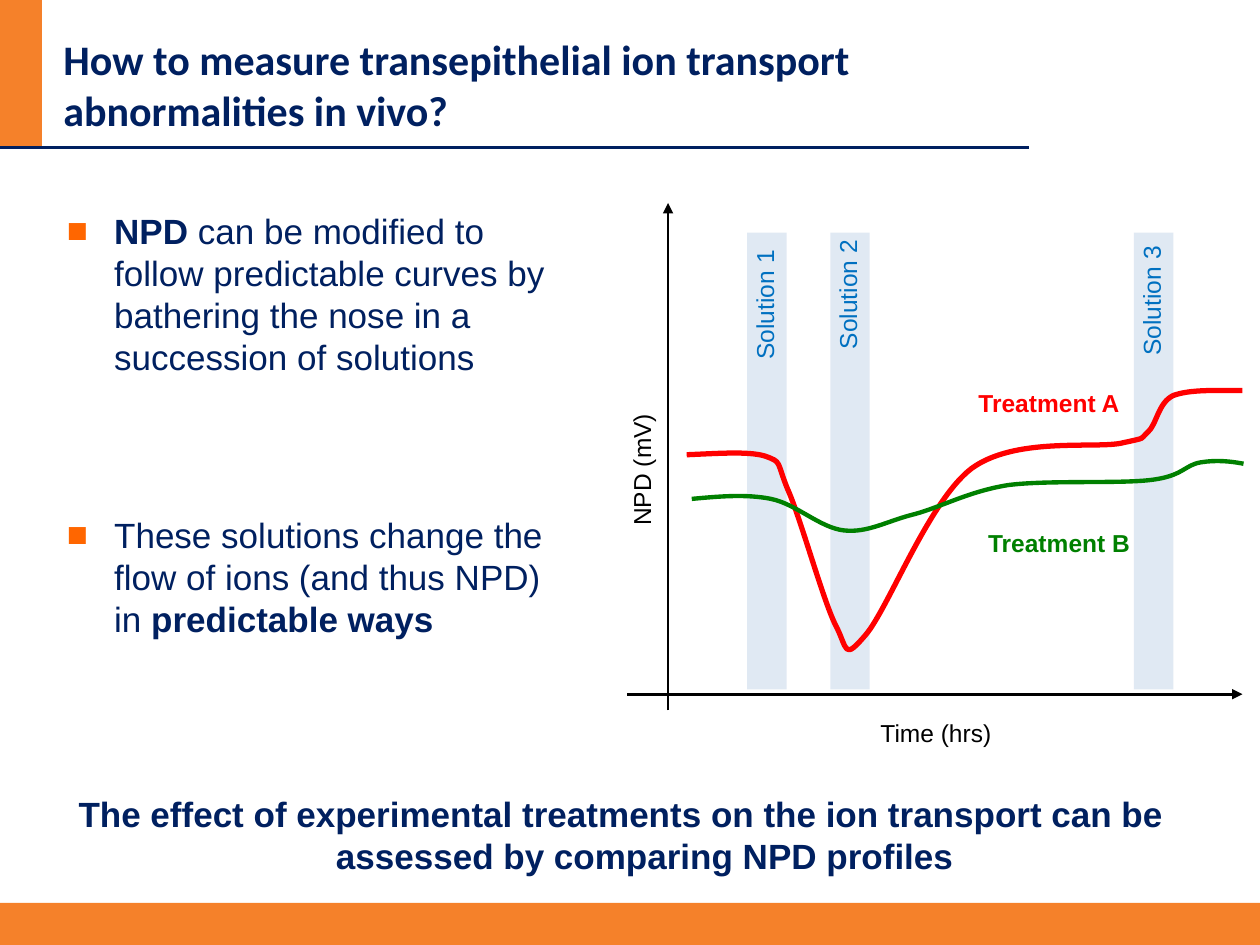
from lxml import etree
from pptx import Presentation
from pptx.dml.color import RGBColor
from pptx.enum.shapes import MSO_CONNECTOR, MSO_SHAPE
from pptx.enum.text import MSO_ANCHOR, MSO_AUTO_SIZE, PP_ALIGN
from pptx.oxml.ns import qn
from pptx.util import Pt

RECTANGLE = MSO_SHAPE.RECTANGLE
STRAIGHT = MSO_CONNECTOR.STRAIGHT
MIDDLE, TOP = MSO_ANCHOR.MIDDLE, MSO_ANCHOR.TOP
LEFT, CENTER = PP_ALIGN.LEFT, PP_ALIGN.CENTER
NO_AUTOFIT = MSO_AUTO_SIZE.NONE

NAVY, ORANGE, BULLET = "002060", "F5812A", "FF6600"
BLACK, RED, GREEN = "000000", "FF0000", "008000"
BAND, BAND_LABEL = "B9CDE5", "0070C0"
LABEL_HEIGHT = 39
HANGING = 27

TREATMENT_A = [
    (62.4, 143.9), (79.7, 143.2), (97.7, 141.8), (107, 144.6),
    (117.1, 148.2), (113.5, 147.5), (120, 163.4),
    (127.2, 179.2), (140.2, 226.7), (147.4, 241.1),
    (154.6, 254.8), (151.7, 262), (164.6, 246.9),
    (177.6, 231.8), (200.6, 170.6), (225.1, 151.8),
    (249.6, 133.8), (293.5, 140.3), (310.1, 137.4),
    (326.6, 133.8), (320.9, 135.3), (325.9, 131),
    (331, 126.6), (331.7, 114.4), (340.3, 110.1),
    (349.7, 106.5), (364.8, 107.2), (379.9, 107.2),
]
TREATMENT_B = [
    (65.3, 169.1), (80.4, 167.7), (96.2, 166.2), (110.6, 169.1),
    (125, 172), (138.7, 185.7), (152.4, 187.1),
    (166.1, 188.6), (177.6, 181.4), (192.7, 177.8),
    (208.6, 173.4), (223.7, 164.8), (246, 161.2),
    (268.3, 158.3), (309.4, 160.5), (327.4, 158.3),
    (346.1, 156.2), (346.8, 149.7), (356.2, 148.2),
    (364.8, 146.8), (372.7, 147.5), (380.6, 149),
]


def color(value):
    return RGBColor.from_string(value)


def set_font(paragraph, size, value, name="Arial", bold=None):
    font = paragraph.font
    font.name, font.size, font.bold = name, Pt(size), bold
    font.color.rgb = color(value)


def set_hanging_indent(paragraph):
    properties = paragraph._p.get_or_add_pPr()
    properties.set("marL", str(Pt(HANGING)))
    properties.set("indent", str(-Pt(HANGING)))
    return properties


def place(shape, box):
    shape.left, shape.top, shape.width, shape.height = map(Pt, box)


def add_bar(slide, box, fill, opacity=100):
    shape = slide.shapes.add_shape(RECTANGLE, *map(Pt, box))
    shape.shadow.inherit = False
    shape.fill.solid()
    shape.fill.fore_color.rgb = color(fill)
    shape.line.fill.background()
    if opacity < 100:
        fill_color = shape.fill._xPr.find(".//" + qn("a:srgbClr"))
        etree.SubElement(fill_color, qn("a:alpha"), val=str(opacity * 1000))


def add_line(slide, start, end, value, arrow=False):
    connector = slide.shapes.add_connector(STRAIGHT, *map(Pt, start + end))
    connector.line.color.rgb = color(value)
    connector.line.width = Pt(1.5)
    if arrow:
        etree.SubElement(connector.line._get_or_add_ln(), qn("a:tailEnd"), type="triangle")
    etree.SubElement(connector._element.spPr, qn("a:effectLst"))


def add_text(slide, box, text, size, value, bold=False, rotation=0):
    shape = slide.shapes.add_textbox(*map(Pt, box))
    shape.rotation = rotation
    shape.text_frame.word_wrap = True
    paragraph = shape.text_frame.paragraphs[0]
    paragraph.text = text
    set_font(paragraph, size, value, bold=bold)
    return paragraph


def add_upward_text(slide, center_x, bottom, text, value):
    length = 96
    box = (center_x - length / 2, bottom - (length + LABEL_HEIGHT) / 2, length, LABEL_HEIGHT)
    add_text(slide, box, text, 14, value, rotation=270)


def add_curve(slide, origin, points, value, width):
    left, top = origin
    outline = [(Pt(left + x), Pt(top + y)) for x, y in points]
    builder = slide.shapes.build_freeform(*outline[0])
    builder.add_line_segments(outline[1:], close=False)
    shape = builder.convert_to_shape()
    path = shape._element.find(".//" + qn("a:path"))
    segments = path.findall(qn("a:lnTo"))
    for index in range(0, len(segments), 3):
        curve = etree.SubElement(path, qn("a:cubicBezTo"))
        for segment in segments[index:index + 3]:
            curve.append(segment[0])
            path.remove(segment)
    shape.shadow.inherit = False
    shape.fill.background()
    shape.line.color.rgb = color(value)
    shape.line.width = Pt(width)


def add_frame(slide, box):
    left, top, width, height = box
    rule = top + 84.25
    add_bar(slide, (left, top, 24, 84.25), ORANGE)
    add_line(slide, (left, rule), (left + 588, rule), NAVY)
    add_bar(slide, (left, top + height - 24, width, 24), ORANGE)


def fill_title(slide, box, text):
    title = slide.shapes.title
    place(title, box)
    frame = title.text_frame
    frame.auto_size = NO_AUTOFIT
    frame.vertical_anchor = MIDDLE
    frame.text = text
    frame.paragraphs[0].alignment = LEFT
    set_font(frame.paragraphs[0], 24, NAVY, "Calibri", True)


def add_bullet(paragraph):
    properties = set_hanging_indent(paragraph)
    bullet_color = etree.SubElement(properties, qn("a:buClr"))
    etree.SubElement(bullet_color, qn("a:srgbClr"), val=BULLET)
    etree.SubElement(properties, qn("a:buFont"), typeface="Arial")
    etree.SubElement(properties, qn("a:buChar"), char="■")


def fill_body(slide, box, items, gap):
    body = slide.placeholders[1]
    place(body, box)
    frame = body.text_frame
    frame.auto_size = NO_AUTOFIT
    frame.vertical_anchor = TOP
    for index, runs in enumerate(items):
        paragraph = frame.add_paragraph() if index else frame.paragraphs[0]
        add_bullet(paragraph)
        paragraph.space_before = Pt(gap if index else 0)
        set_font(paragraph, 20, NAVY)
        for text, bold in runs:
            run = paragraph.add_run()
            run.text = text
            run.font.bold = bold


def add_profile_plot(slide, box):
    left, top, width, height = box
    axis, base = left + 51.75, top + 280.7
    bands = [(97, 96.5), (144.5, 90.6), (318, 94.2)]
    for offset, label_bottom in bands:
        add_bar(slide, (left + offset, top + 17, 22.5, 261), BAND, 43)
    add_curve(slide, (left, top), TREATMENT_A, RED, 3)
    add_line(slide, (axis, top + height), (axis, top), BLACK, True)
    add_line(slide, (left + 28.5, base), (left + width, base), BLACK, True)
    for number, (offset, label_bottom) in enumerate(bands, 1):
        add_upward_text(slide, left + offset + 17.3, top + label_bottom,
                        f"Solution {number}", BAND_LABEL)
    add_upward_text(slide, left + 44, top + 191.5, "NPD (mV)", BLACK)
    add_curve(slide, (left, top), TREATMENT_B, GREEN, 2.5)
    for x, y, text, value, bold in [
        (166, 291, "Time (hrs)", BLACK, False),
        (222, 102, "Treatment A", RED, True),
        (227.5, 182, "Treatment B", GREEN, True),
    ]:
        add_text(slide, (left + x, top + y, 142, LABEL_HEIGHT), text, 14, value, bold)


def add_conclusion(slide, box, text):
    left, top, width, height = box
    paragraph = add_text(slide, (left - HANGING, top, width + HANGING, height),
                         text, 20, NAVY, True)
    paragraph.alignment = CENTER
    set_hanging_indent(paragraph)


def main():
    presentation = Presentation()
    presentation.slide_width, presentation.slide_height = Pt(720), Pt(540)
    slide = presentation.slides.add_slide(presentation.slide_layouts[1])
    add_frame(slide, (0, 0, 720, 540))
    fill_title(slide, (29, 9.2, 535, 78),
               "How to measure transepithelial ion transport abnormalities in vivo?")
    fill_body(slide, (31, 116, 305, 291), [
        [("NPD ", True), ("can be modified to follow predictable curves by "
                          "bathering the nose in a succession of solutions", False)],
        [("These solutions change the flow of ions (and thus NPD) in ", False),
         ("predictable ways", True)],
    ], 78)
    add_profile_plot(slide, (330, 116, 380, 290))
    add_conclusion(slide, (31.5, 449.5, 674, 57.5),
                   "The effect of experimental treatments on the ion transport can be "
                   "assessed by comparing NPD profiles")
    presentation.save("out.pptx")


if __name__ == "__main__":
    main()
